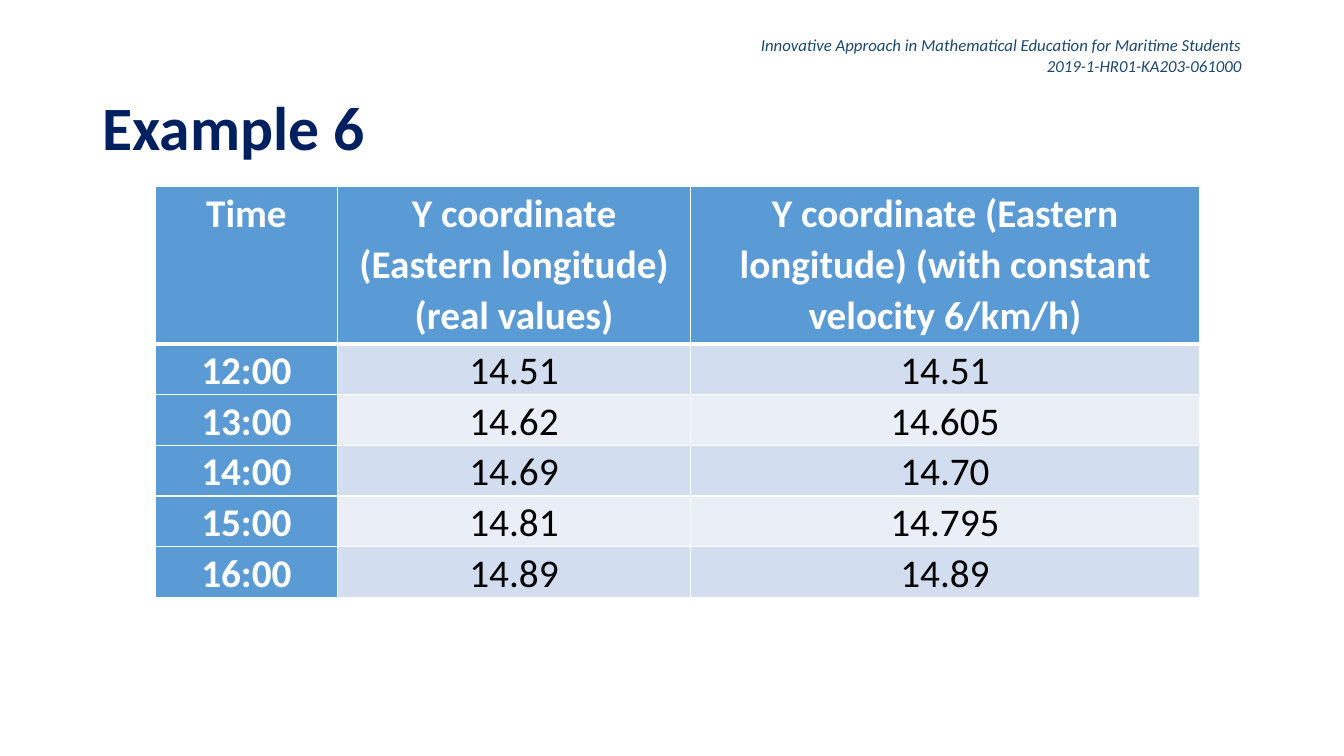
"""Build the Example 6 slide comparing real and constant-velocity longitudes."""
from lxml import etree
from pptx import Presentation
from pptx.dml.color import RGBColor
from pptx.enum.text import MSO_ANCHOR, PP_ALIGN
from pptx.oxml.ns import qn
from pptx.util import Cm, Pt

LEFT, RIGHT, CENTER = PP_ALIGN.LEFT, PP_ALIGN.RIGHT, PP_ALIGN.CENTER
TOP, MIDDLE = MSO_ANCHOR.TOP, MSO_ANCHOR.MIDDLE

WHITE, BLACK = "FFFFFF", "000000"
NAVY, STEEL = "002060", "1C476E"
BLUE, DARK_BAND, LIGHT_BAND = "5B9BD5", "D2DEEF", "EAEFF7"

PROJECT_LINES = [
    "Innovative Approach in Mathematical Education for Maritime Students",
    "2019-1-HR01-KA203-061000",
]
LONGITUDES = [
    ["Time", "Y coordinate (Eastern longitude) (real values)",
     "Y coordinate (Eastern longitude) (with constant velocity 6/km/h)"],
    ["12:00", "14.51", "14.51"],
    ["13:00", "14.62", "14.605"],
    ["14:00", "14.69", "14.70"],
    ["15:00", "14.81", "14.795"],
    ["16:00", "14.89", "14.89"],
]
COLUMN_WIDTHS = [4.6, 8.89, 12.83]
HEADER_HEIGHT, HOUR_HEIGHT = 3.96, 1.28


def rgb(color):
    """Turn a hex string into a colour."""
    return RGBColor.from_string(color)


def style_font(paragraph, size, color, bold=False, italic=False):
    """Set the font of a whole paragraph."""
    font = paragraph.font
    font.name, font.size = "Calibri", Pt(size)
    font.bold, font.italic = bold, italic
    font.color.rgb = rgb(color)


def add_text(slide, lines, top, height, align, anchor, spacing, **font):
    """Add a full-width text box with one paragraph per line."""
    box = slide.shapes.add_textbox(Cm(2.33), Cm(top), Cm(29.21), Cm(height))
    frame = box.text_frame
    frame.word_wrap = True
    frame.vertical_anchor = anchor
    frame.text = "\n".join(lines)
    for paragraph in frame.paragraphs:
        paragraph.alignment = align
        paragraph.line_spacing = spacing
        style_font(paragraph, **font)


def add_borders(cell, top, bottom):
    """Give a cell white borders, with top and bottom widths in points."""
    properties = cell._tc.get_or_add_tcPr()
    for side, width in (("L", 1), ("R", 1), ("T", top), ("B", bottom)):
        line = etree.SubElement(properties, qn(f"a:ln{side}"), w=str(Pt(width)))
        fill = etree.SubElement(line, qn("a:solidFill"))
        etree.SubElement(fill, qn("a:srgbClr"), val=WHITE)


def fill_cell(cell, text, row, column):
    """Write one value and style it by its place in the table."""
    heading = row == 0 or column == 0
    band = DARK_BAND if row % 2 else LIGHT_BAND
    add_borders(cell, top=3 if row == 1 else 1, bottom=3 if row == 0 else 1)
    cell.fill.solid()
    cell.fill.fore_color.rgb = rgb(BLUE if heading else band)
    cell.margin_left = cell.margin_right = Cm(0.19)
    cell.margin_top = cell.margin_bottom = 0
    cell.text = text
    paragraph = cell.text_frame.paragraphs[0]
    paragraph.alignment = CENTER
    paragraph.line_spacing = 1.07
    paragraph.space_after = Pt(8)
    style_font(paragraph, 28, WHITE if heading else BLACK, bold=heading)


def add_longitude_table(slide):
    """Add the table of longitudes by hour."""
    row_heights = [HEADER_HEIGHT] + [HOUR_HEIGHT] * (len(LONGITUDES) - 1)
    table = slide.shapes.add_table(
        len(LONGITUDES), len(COLUMN_WIDTHS), Cm(3.91), Cm(4.7),
        Cm(sum(COLUMN_WIDTHS)), Cm(sum(row_heights))).table
    table.first_col = True
    for column, width in zip(table.columns, COLUMN_WIDTHS):
        column.width = Cm(width)
    for row, height in zip(table.rows, row_heights):
        row.height = Cm(height)
    for row, values in enumerate(LONGITUDES):
        for column, text in enumerate(values):
            fill_cell(table.cell(row, column), text, row, column)


def main():
    """Build and save the slide."""
    presentation = Presentation()
    presentation.slide_width, presentation.slide_height = Cm(33.87), Cm(19.05)
    slide = presentation.slides.add_slide(presentation.slide_layouts[6])
    add_text(slide, PROJECT_LINES, 0.76, 1.27, RIGHT, MIDDLE, 1.0,
             size=12, color=STEEL, italic=True)
    add_text(slide, ["Example 6"], 2.33, 2.36, LEFT, TOP, 0.9,
             size=44, color=NAVY, bold=True)
    add_longitude_table(slide)
    presentation.save("out.pptx")


if __name__ == "__main__":
    main()
